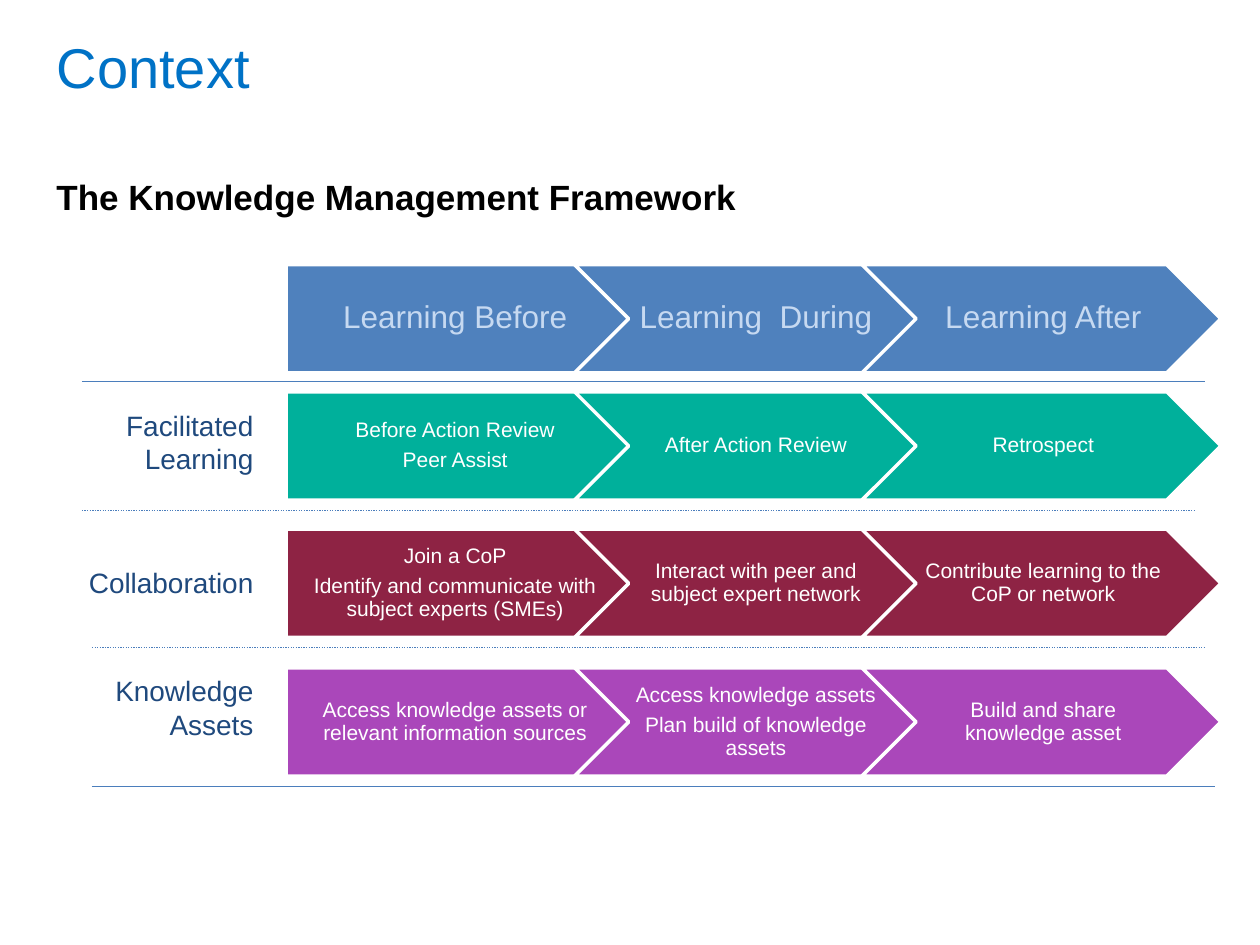
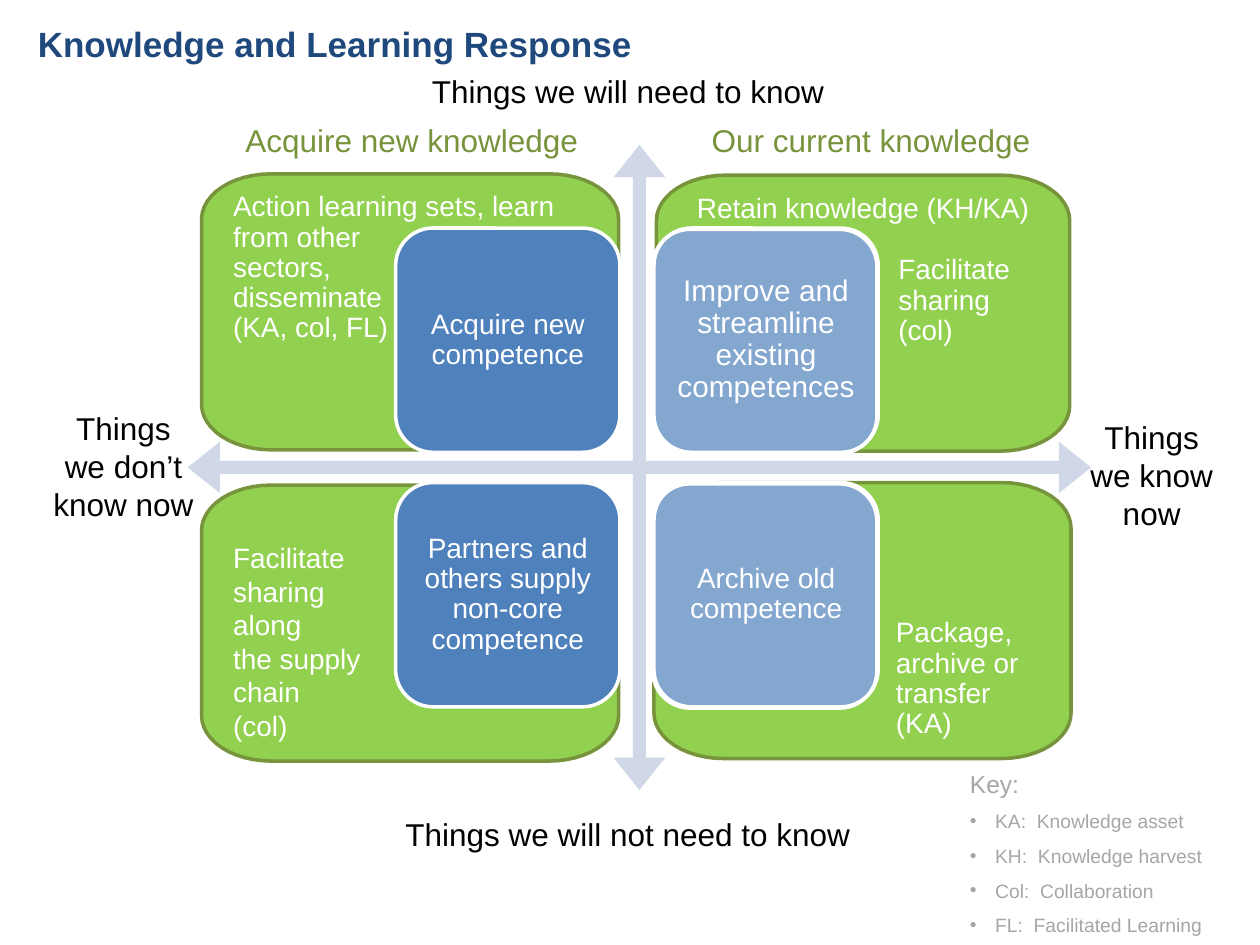
"""Build two slides on the knowledge management framework."""
from math import cos, pi, sin

from lxml.etree import SubElement
from pptx import Presentation
from pptx.dml.color import RGBColor
from pptx.enum.dml import MSO_LINE
from pptx.enum.shapes import MSO_CONNECTOR, MSO_SHAPE
from pptx.enum.text import MSO_ANCHOR, MSO_AUTO_SIZE, PP_ALIGN
from pptx.oxml.ns import qn
from pptx.util import Inches, Pt

HUES = {"white": "FFFFFF", "black": "000000", "title": "0072C6", "navy": "1F497D",
        "blue": "4F81BD", "pale": "C6D9F1", "teal": "00B09B", "wine": "8E2344",
        "purple": "AA47BA", "rule": "4B7EBC", "green": "92D050", "olive": "77933C",
        "arrow": "D0D8E8", "grey": "A6A6A6"}
LEFT, MID, RIGHT = PP_ALIGN.LEFT, PP_ALIGN.CENTER, PP_ALIGN.RIGHT
TOP, CENTRE, BASE = MSO_ANCHOR.TOP, MSO_ANCHOR.MIDDLE, MSO_ANCHOR.BOTTOM


def write(shape, lines, size, hue, align=LEFT, anchor=TOP, pad=(0.1, 0.05, 0.1, 0.05),
          wrap=True, bold=False, lead=1.0, after=0, dent=0, dot=False):
    frame = shape.text_frame
    frame.word_wrap, frame.vertical_anchor = wrap, anchor
    frame.auto_size = MSO_AUTO_SIZE.NONE
    (frame.margin_left, frame.margin_top,
     frame.margin_right, frame.margin_bottom) = [Inches(v) for v in pad]
    for line in lines:
        para = frame.paragraphs[0]
        if para.runs:
            para = frame.add_paragraph()
        para.alignment, para.line_spacing = align, lead
        para.space_before, para.space_after = Pt(0), Pt(after)
        props = para._p.get_or_add_pPr()
        props.set("marL", str(Inches(dent)))
        props.set("indent", str(-Inches(dent) if dot else 0))
        if dot:
            SubElement(props, qn("a:buFont")).set("typeface", "Arial")
            SubElement(props, qn("a:buChar")).set("char", "•")
        run = para.add_run()
        run.text = line
        run.font.name, run.font.size, run.font.bold = "Arial", Pt(size), bold
        run.font.color.rgb = RGBColor.from_string(HUES[hue])


def paint(shape, fill, edge=None):
    shape.shadow.inherit = False
    shape.fill.solid()
    shape.fill.fore_color.rgb = RGBColor.from_string(HUES[fill])
    if edge:
        shape.line.color.rgb = RGBColor.from_string(HUES[edge])
        shape.line.width = Pt(2)
    else:
        shape.line.fill.background()


deck = Presentation()
deck.slide_width, deck.slide_height = Inches(10), Inches(7.5)
heads = [("Context", (0.35, 0.21, 7.89, 0.64), 32, "title", False),
         ("Knowledge and Learning Response", (0.2, 0.13, 4.96, 0.44), 20, "navy", True)]
slides = []
for name, box, size, hue, bold in heads:
    slide = deck.slides.add_slide(deck.slide_layouts[5])
    title = slide.shapes.title
    title.left, title.top, title.width, title.height = [Inches(v) for v in box]
    write(title, [name], size, hue, bold=bold, wrap=not bold)
    slides.append(slide)
frame, grid = [slide.shapes for slide in slides]

box = frame.add_textbox(Inches(0.35), Inches(1.34), Inches(5.64), Inches(0.44))
write(box, ["The Knowledge Management Framework"], 20, "black", wrap=False, bold=True)

rows = [
    (2.1, "blue", [["Learning Before"], ["Learning  During"], ["Learning After"]]),
    (3.11, "teal", [["Before Action Review", "Peer Assist"],
                    ["After Action Review"], ["Retrospect"]]),
    (4.2, "wine", [["Join a CoP", "Identify and communicate with subject experts (SMEs)"],
                   ["Interact with peer and subject expert network"],
                   ["Contribute learning to the CoP or network"]]),
    (5.3, "purple", [["Access knowledge assets or relevant information sources"],
                     ["Access knowledge assets", "Plan build of knowledge assets"],
                     ["Build and share knowledge asset"]]),
]
for top, fill, cells in rows:
    size, hue = (18, "pale") if fill == "blue" else (12, "white")
    for col, (left, lines) in enumerate(zip((2.27, 4.56, 6.84), cells)):
        kind = MSO_SHAPE.CHEVRON if col else MSO_SHAPE.PENTAGON
        step = frame.add_shape(kind, Inches(left), Inches(top), Inches(2.85), Inches(0.86))
        paint(step, fill, "white")
        pad = (0.05 if col else 0.07, 0.04, 0.02, 0.04)
        write(step, lines, size, hue, MID, CENTRE, pad, lead=0.9, after=0.35 * size)

tags = [("Facilitated Learning", 0.72, 3.19, 1.39, 0.64),
        ("Collaboration", 0.59, 4.44, 1.52, 0.37),
        ("Knowledge Assets", 0.39, 5.3, 1.72, 0.64)]
for name, *area in tags:
    tag = frame.add_textbox(*[Inches(v) for v in area])
    write(tag, [name], 16, "navy", RIGHT, wrap=" " in name)

for start, end, top, dotted in [(0.65, 9.56, 3.03, False), (0.65, 9.48, 4.05, True),
                                (0.73, 9.56, 5.14, True), (0.73, 9.64, 6.24, False)]:
    rule = frame.add_connector(MSO_CONNECTOR.STRAIGHT, Inches(start), Inches(top),
                               Inches(end), Inches(top))
    rule.line.color.rgb = RGBColor.from_string(HUES["rule"])
    rule.line.width = Pt(0.75)
    if dotted:
        rule.line.dash_style = MSO_LINE.ROUND_DOT
    SubElement(rule._element.spPr, qn("a:effectLst"))

soft = {"lead": 0.9, "after": 18}
panels = [
    (1.6, 3.85, 3.31, BASE, [(["Facilitate", "sharing", "along", "the supply", "chain",
                               "(col)"], {"dent": 0.1})]),
    (1.6, 1.38, 3.31, TOP, [(["Action learning sets, learn from other", "sectors,",
                              "disseminate", "(KA, col, FL)"],
                             {"dent": 0.1, "lead": 0.9})]),
    (5.19, 3.83, 3.31, BASE, [(["Package, archive or transfer (KA)"],
                               {"dent": 1.77, **soft})]),
    (5.21, 1.39, 3.28, TOP, [(["Retain knowledge (KH/KA)"], {"align": MID, **soft}),
                             (["Facilitate sharing (col)"], {"dent": 1.77, **soft})]),
]
high, bend, drop, cuts = 2.19, 0.55, 0.36, 12
for left, top, wide, anchor, parts in panels:
    dots = []
    for turn in range(4):
        midx = left + (wide - bend if turn in (0, 3) else bend)
        midy = top + (high - drop if turn in (0, 1) else drop)
        for cut in range(cuts + 1):
            angle = (turn + cut / cuts) * pi / 2
            dots.append((Inches(midx + bend * cos(angle)), Inches(midy + drop * sin(angle))))
    path = grid.build_freeform(*dots[0])
    path.add_line_segments(dots[1:], close=True)
    panel = path.convert_to_shape()
    paint(panel, "green", "olive")
    for lines, style in parts:
        write(panel, lines, 16, "white", anchor=anchor, pad=(0.15,) * 4, **style)

cross = grid.add_shape(MSO_SHAPE.QUAD_ARROW, Inches(1.49), Inches(1.15),
                       Inches(7.17), Inches(5.12))
for spot, ratio in enumerate((0.02, 0.04, 0.05)):
    cross.adjustments[spot] = ratio
paint(cross, "arrow")

notes = [
    (["Things we will not need to know"], (3.12, 6.42, 3.76, 0.4), "black", False),
    (["Things we will need to know"], (3.33, 0.52, 3.34, 0.4), "black", False),
    (["Things", "we don’t know now"], (0.23, 3.2, 1.5, 1.01), "black", True),
    (["Things", "we know now"], (8.39, 3.27, 1.5, 1.01), "black", True),
    (["Our current knowledge"], (5.55, 0.91, 2.75, 0.4), "olive", False),
    (["Acquire new knowledge"], (1.85, 0.91, 2.87, 0.4), "olive", False),
]
for lines, area, hue, wrap in notes:
    note = grid.add_textbox(*[Inches(v) for v in area])
    write(note, lines, 18, hue, MID if wrap else LEFT, wrap=wrap)

side = Inches(1.78)
tiles = [("Improve and streamline existing competences", 5.19, 1.81, 17),
         ("Archive old competence", 5.19, 3.83, 16),
         ("Partners and others supply non-core competence", 3.14, 3.83, 16),
         ("Acquire new competence", 3.14, 1.81, 16)]
for words, left, top, size in tiles:
    tile = grid.add_shape(MSO_SHAPE.ROUNDED_RECTANGLE, Inches(left), Inches(top), side, side)
    paint(tile, "blue", "white")
    write(tile, [words], size, "white", MID, CENTRE, (0.07,) * 4, lead=0.9, after=0.35 * size)
for top in (1.82, 3.84):
    veil = grid.add_shape(MSO_SHAPE.ROUNDED_RECTANGLE, Inches(5.18), Inches(top), side, side)
    paint(veil, "white", "white")
    tint = veil._element.spPr.find(qn("a:solidFill"))[0]
    SubElement(tint, qn("a:alpha")).set("val", "30000")

key = grid.add_textbox(Inches(7.6), Inches(6.05), Inches(2.06), Inches(1.45))
write(key, ["Key:"], 14, "grey", wrap=False)
write(key, ["KA:  Knowledge asset", "KH:  Knowledge harvest", "Col:  Collaboration",
            "FL:  Facilitated Learning"], 11, "grey", wrap=False, lead=1.5, dent=0.2, dot=True)

deck.save("out.pptx")
